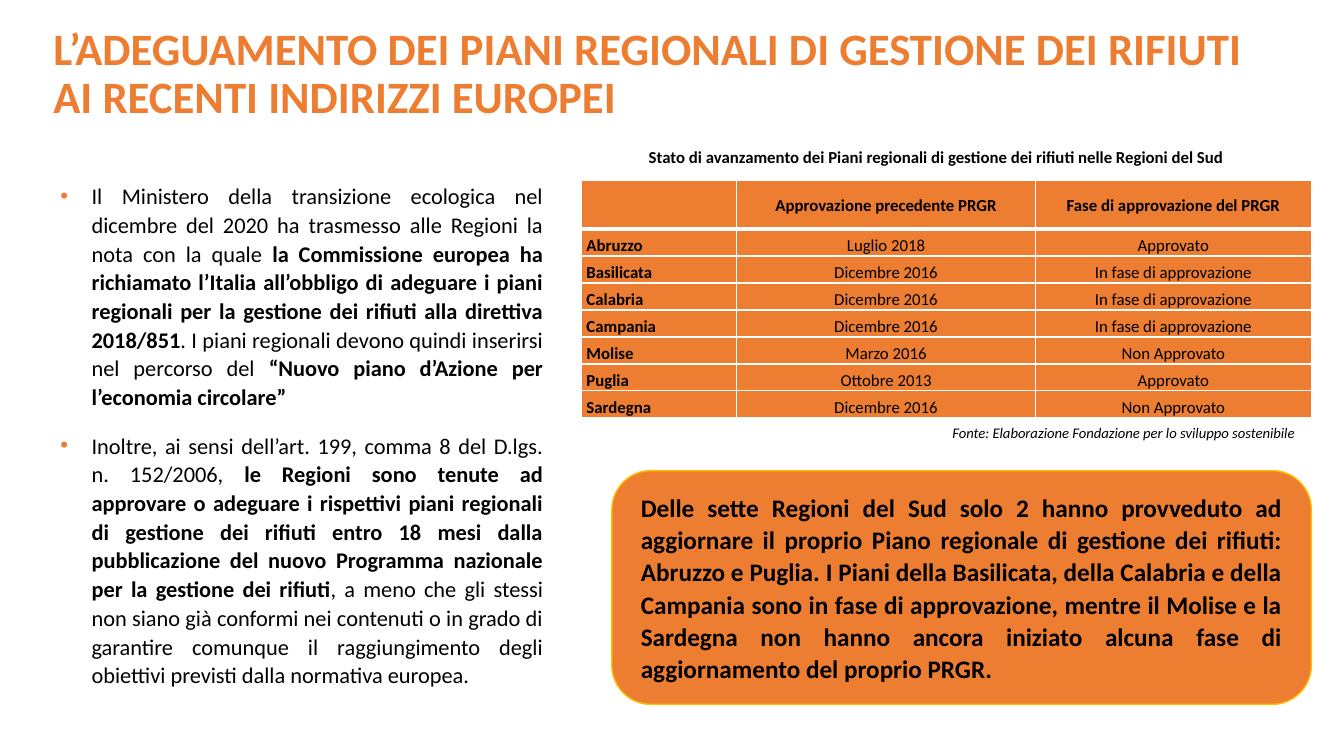
"""Build the slide on regional waste management plans in Southern Italy."""
from lxml.etree import SubElement
from pptx import Presentation
from pptx.dml.color import RGBColor
from pptx.enum.shapes import MSO_SHAPE
from pptx.enum.text import MSO_ANCHOR, MSO_AUTO_SIZE, PP_ALIGN
from pptx.oxml.ns import qn
from pptx.util import Cm, Pt

ORANGE, GOLD, BLACK, WHITE = "ED7D31", "FFC000", "000000", "FFFFFF"


def color(code):
    return RGBColor.from_string(code)


def write(para, spans, size, code=BLACK, italic=False, **layout):
    for name, value in layout.items():
        setattr(para, name, value)
    for text, bold in spans:
        span = para.add_run()
        span.text = text
        look = {"name": "Calibri", "size": Pt(size), "bold": bold, "italic": italic}
        for name, value in look.items():
            setattr(span.font, name, value)
        span.font.color.rgb = color(code)


deck = Presentation()
deck.slide_width, deck.slide_height = Cm(33.87), Cm(19.05)
page = deck.slides.add_slide(deck.slide_layouts[5])

title = page.shapes.title
place = {"left": Cm(1.09), "top": Cm(0.05), "width": Cm(31.67), "height": Cm(3.68)}
for name, value in place.items():
    setattr(title, name, value)
title.text_frame.auto_size = MSO_AUTO_SIZE.NONE
title.text_frame.vertical_anchor = MSO_ANCHOR.MIDDLE
heading = "L’ADEGUAMENTO DEI PIANI REGIONALI DI GESTIONE DEI RIFIUTI AI RECENTI INDIRIZZI EUROPEI"
write(title.text_frame.paragraphs[0], [(heading, True)], 32, ORANGE,
      alignment=PP_ALIGN.LEFT, line_spacing=0.9)

panel = page.shapes.add_shape(MSO_SHAPE.ROUNDED_RECTANGLE, Cm(15.42), Cm(11.86), Cm(17.63), Cm(5.89))
panel.shadow.inherit = False
panel.fill.solid()
panel.fill.fore_color.rgb = color(ORANGE)
panel.line.color.rgb = color(GOLD)
panel.line.width = Pt(1)

bullets = [
    [("Il Ministero della transizione ecologica nel dicembre del 2020 ha trasmesso alle Regioni "
      "la nota con la quale ", False),
     ("la Commissione europea ha richiamato l’Italia all’obbligo di adeguare i piani regionali "
      "per la gestione dei rifiuti alla direttiva 2018/851", True),
     (". I piani regionali devono quindi inserirsi nel percorso del ", False),
     ("“Nuovo piano d’Azione per l’economia circolare”", True)],
    [("Inoltre, ai sensi dell’art. 199, comma 8 del D.lgs. n. 152/2006, ", False),
     ("le Regioni sono tenute ad approvare o adeguare i rispettivi piani regionali di gestione "
      "dei rifiuti entro 18 mesi dalla pubblicazione del nuovo Programma nazionale per la "
      "gestione dei rifiuti", True),
     (", a meno che gli stessi non siano già conformi nei contenuti o in grado di garantire "
      "comunque il raggiungimento degli obiettivi previsti dalla normativa europea.", False)],
]
body = page.shapes.add_textbox(Cm(0), Cm(4.42), Cm(13.94), Cm(13.16)).text_frame
body.word_wrap = True
for index, spans in enumerate(bullets):
    para = body.add_paragraph() if index else body.paragraphs[0]
    write(para, spans, 16, alignment=PP_ALIGN.JUSTIFY, line_spacing=1.07,
          space_before=Pt(2 if index else 0), space_after=Pt(12))
    props = para._p.get_or_add_pPr()
    props.set("marL", str(Cm(2.06)))
    props.set("indent", str(-Cm(0.79)))
    SubElement(SubElement(props, qn("a:buClr")), qn("a:srgbClr"), val=ORANGE)
    SubElement(props, qn("a:buFont"), typeface="Arial")
    SubElement(props, qn("a:buChar"), char="•")

caption = "Stato di avanzamento dei Piani regionali di gestione dei rifiuti nelle Regioni del Sud"
source = "Fonte: Elaborazione Fondazione per lo sviluppo sostenibile"
summary = (
    "Delle sette Regioni del Sud solo 2 hanno provveduto ad aggiornare il proprio Piano regionale "
    "di gestione dei rifiuti: Abruzzo e Puglia. I Piani della Basilicata, della Calabria e della "
    "Campania sono in fase di approvazione, mentre il Molise e la Sardegna non hanno ancora "
    "iniziato alcuna fase di aggiornamento del proprio PRGR."
)
notes = [
    (caption, (16.1, 3.58, 16.94, 0.76), True, True, {"size": 12}),
    (source, (23.75, 10.52, 9.3, 0.71), False, False,
     {"size": 10.5, "italic": True, "line_spacing": 1.07}),
    (summary, (15.9, 12.22, 16.66, 5.16), True, True,
     {"size": 18, "alignment": PP_ALIGN.JUSTIFY, "line_spacing": 1.07}),
]
for text, area, wrap, bold, look in notes:
    box = page.shapes.add_textbox(*map(Cm, area))
    box.text_frame.word_wrap = wrap
    write(box.text_frame.paragraphs[0], [(text, bold)], **look)

rows = [
    ("", "Approvazione precedente PRGR", "Fase di approvazione del PRGR"),
    ("Abruzzo", "Luglio 2018", "Approvato"),
    ("Basilicata", "Dicembre 2016", "In fase di approvazione"),
    ("Calabria", "Dicembre 2016", "In fase di approvazione"),
    ("Campania", "Dicembre 2016", "In fase di approvazione"),
    ("Molise", "Marzo 2016", "Non Approvato"),
    ("Puglia", "Ottobre 2013", "Approvato"),
    ("Sardegna", "Dicembre 2016", "Non Approvato"),
]
table = page.shapes.add_table(len(rows), 3, Cm(14.66), Cm(4.55), Cm(18.39), Cm(5.98)).table
for column, width in zip(table.columns, (3.91, 7.52, 6.96)):
    column.width = Cm(width)
for r, texts in enumerate(rows):
    table.rows[r].height = Cm(0.68 if r else 1.22)
    for c, text in enumerate(texts):
        cell = table.cell(r, c)
        layout = {"margin_left": Cm(0.12), "margin_right": Cm(0.12), "margin_top": 0, "margin_bottom": 0,
                  "vertical_anchor": MSO_ANCHOR.BOTTOM if r else MSO_ANCHOR.MIDDLE}
        for name, value in layout.items():
            setattr(cell, name, value)
        props = cell._tc.get_or_add_tcPr()
        for side in "LRTB":
            thick = (r, side) in ((0, "B"), (1, "T"))
            edge = SubElement(props, qn(f"a:ln{side}"), w=str(Pt(3 if thick else 1)))
            SubElement(SubElement(edge, qn("a:solidFill")), qn("a:srgbClr"), val=WHITE)
        cell.fill.solid()
        cell.fill.fore_color.rgb = color(ORANGE)
        if text:
            write(cell.text_frame.paragraphs[0], [(text, r == 0 or c == 0)], 12, line_spacing=1.07,
                  alignment=PP_ALIGN.CENTER if c else PP_ALIGN.LEFT)

deck.save("out.pptx")
